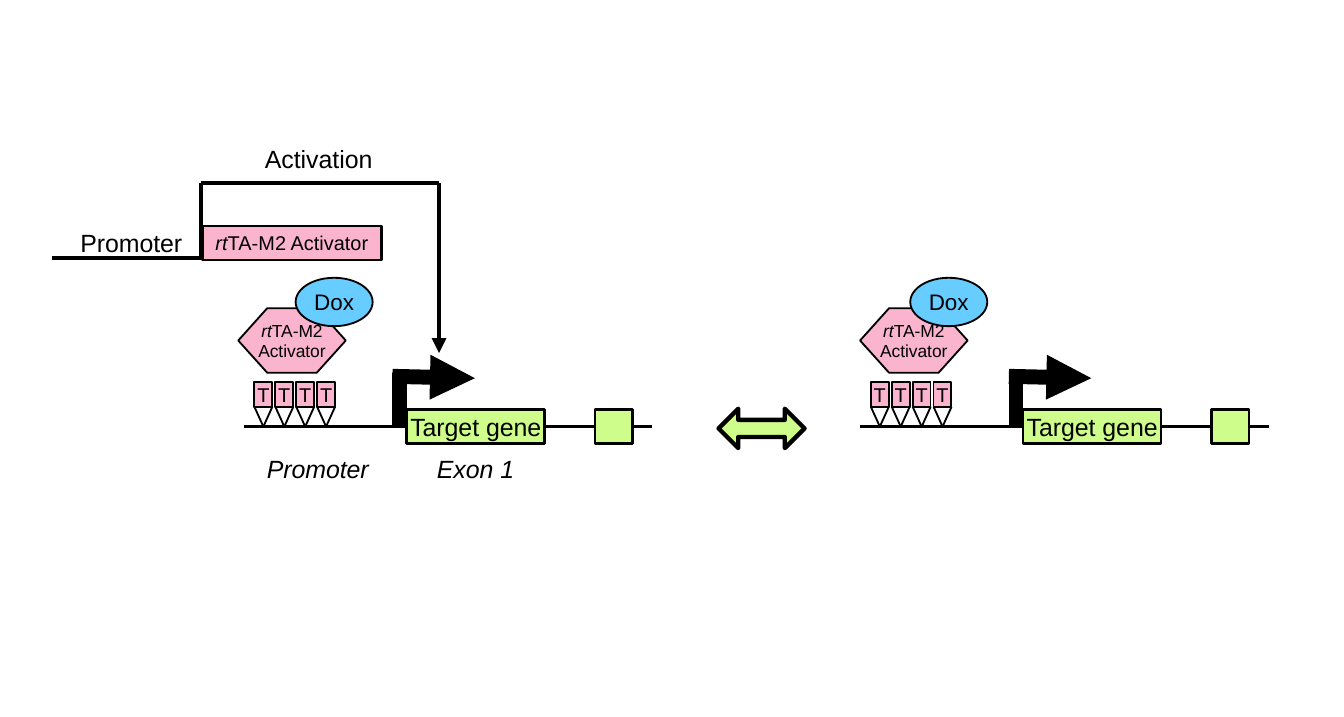
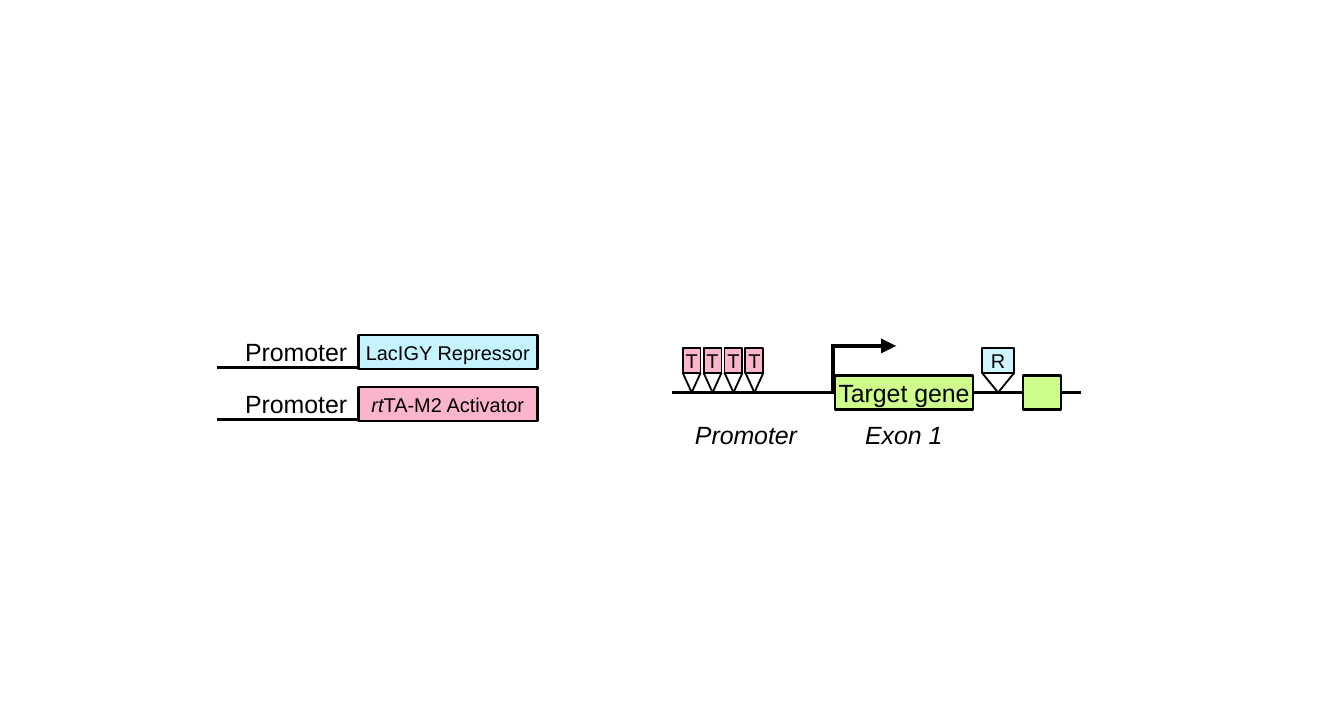
from dataclasses import dataclass

from lxml.etree import SubElement
from pptx import Presentation
from pptx.dml.color import RGBColor
from pptx.enum.shapes import MSO_CONNECTOR, MSO_SHAPE
from pptx.enum.text import MSO_ANCHOR, PP_ALIGN
from pptx.oxml.ns import qn
from pptx.util import Inches, Pt


@dataclass(frozen=True)
class Theme:
    font: str = "Arial"
    ink: str = "000000"
    pink: str = "FAB4CE"
    green: str = "CEFD8B"
    blue: str = "67CCFF"
    pale_blue: str = "C5F3FF"
    operator_blue: str = "CFF5FF"
    label: int = 10
    dox: int = 9
    small: int = 8
    tiny: int = 7
    hairline: float = 0.75
    outline: float = 1
    strand: float = 1.5
    heavy: float = 6


T = Theme()
RT = ("rt", True)
ACTIVATOR = [[RT, ("TA-M2 Activator", False)]]
REPRESSOR = [[("LacIGY Repressor", False)]]


# Shared drawing helpers
def write(tf, lines, size):
    """Fill a text frame; each line is a list of (text, italic) runs."""
    for i, runs in enumerate(lines):
        p = tf.paragraphs[0] if i == 0 else tf.add_paragraph()
        p.font.name, p.font.size = T.font, Pt(size)
        p.font.color.rgb = RGBColor.from_string(T.ink)
        for text, italic in runs:
            r = p.add_run()
            r.text = text
            r.font.italic = italic


def add_label(shapes, x, y, w, text, italic=False):
    tf = shapes.add_textbox(Inches(x), Inches(y), Inches(w), Inches(0.27)).text_frame
    tf.word_wrap = False
    write(tf, [[(text, italic)]], T.label)


def add_block(shapes, kind, x, y, w, h, fill, weight, lines=(), size=T.label):
    sp = shapes.add_shape(kind, Inches(x), Inches(y), Inches(w), Inches(h))
    sp.shadow.inherit = False
    sp.fill.solid()
    sp.fill.fore_color.rgb = RGBColor.from_string(fill)
    sp.line.color.rgb = RGBColor.from_string(T.ink)
    sp.line.width = Pt(weight)
    tf = sp.text_frame
    tf.word_wrap = False
    tf.vertical_anchor = MSO_ANCHOR.MIDDLE
    write(tf, lines, size)
    for p in tf.paragraphs:
        p.alignment = PP_ALIGN.CENTER
    return sp


def add_line(shapes, x1, y1, x2, y2, weight=T.strand, arrow=False):
    c = shapes.add_connector(MSO_CONNECTOR.STRAIGHT, Inches(x1), Inches(y1),
                             Inches(x2), Inches(y2))
    c.line.color.rgb = RGBColor.from_string(T.ink)
    c.line.width = Pt(weight)
    sp_pr = c._element.spPr
    if arrow:
        SubElement(sp_pr.find(qn("a:ln")), qn("a:tailEnd"), type="triangle")
    SubElement(sp_pr, qn("a:effectLst"))
    return c


# Binding site: lettered box on a V that touches the strand
def add_operator(shapes, x, y, w, letter, fill):
    add_block(shapes, MSO_SHAPE.RECTANGLE, x, y - 0.25, w, 0.14, fill,
              T.hairline, [[(letter, False)]], T.small)
    for side in (x, x + w):
        add_line(shapes, side, y - 0.11, x + w / 2, y, T.hairline)


# Target gene: x is the strand's left end, y its height
def add_target_gene(s, x, y, repressor_site=False):
    shapes = s.shapes.add_group_shape().shapes
    h = 0.19
    strand = add_line(shapes, x, y, x + 0.91, y)
    intron = add_line(shapes, x + 1.68, y, x + 2.28, y)
    exon1 = add_block(shapes, MSO_SHAPE.RECTANGLE, x + 0.91, y - h / 2, 0.77, h,
                      T.green, T.outline, [[("Target gene", False)]])
    strand.end_connect(exon1, 1)
    intron.begin_connect(exon1, 3)
    add_block(shapes, MSO_SHAPE.RECTANGLE, x + 1.96, y - h / 2, 0.21, h,
              T.green, T.outline)
    for i in range(4):
        add_operator(shapes, x + 0.06 + 0.35 * i / 3, y, 0.1, "T", T.pink)
    if repressor_site:
        add_operator(shapes, x + 1.73, y, 0.18, "R", T.operator_blue)
    # Transcription start
    add_line(shapes, x + 0.9, y - 0.26, x + 1.25, y - 0.26, arrow=True)
    add_line(shapes, x + 0.9, y - 0.27, x + 0.9, y)


def add_gene_labels(s, x, y):
    add_label(s.shapes, x + 0.03, y + 0.1, 0.78, "Promoter", True)
    add_label(s.shapes, x + 0.98, y + 0.1, 0.63, "Exon 1", True)


def add_strong_start(s, x, y):
    add_line(s.shapes, x + 0.83, y - 0.28, x + 1.29, y - 0.27, T.heavy, True)
    add_line(s.shapes, x + 0.87, y - 0.3, x + 0.87, y, T.heavy)


# Activator protein with bound Dox
def add_activator_complex(s, x, y, dox_x):
    hexagon = add_block(s.shapes, MSO_SHAPE.HEXAGON, x, y, 0.6, 0.36, T.pink,
                        T.hairline, [[RT, ("TA-M2", False)], [("Activator", False)]],
                        T.tiny)
    hexagon.adjustments[0] = 0.449
    add_block(s.shapes, MSO_SHAPE.OVAL, dox_x, y - 0.17, 0.43, 0.27, T.blue,
              T.hairline, [[("Dox", False)]], T.dox)


# Regulator cassette: promoter strand leading to a coding box at x, y
def add_cassette(s, x, y, lead, fill, lines):
    add_line(s.shapes, x - lead, y + 0.18, x, y + 0.18)
    add_label(s.shapes, x - lead + 0.06, y - 0.04, 0.77, "Promoter")
    add_block(s.shapes, MSO_SHAPE.RECTANGLE, x, y, 1, 0.19, fill, T.outline,
              lines, T.small)


# Path from the activator box up, across and down to the target gene
def add_activation_path(s, x, y, w):
    add_label(s.shapes, x + 0.26, y - 0.27, 0.81, "Activation")
    add_line(s.shapes, x, y + 0.43, x, y)
    add_line(s.shapes, x, y, x + w, y)
    add_line(s.shapes, x + w, y, x + w, y + 0.95, arrow=True)


def build_activation_slide(s):
    arrow = add_block(s.shapes, MSO_SHAPE.UP_DOWN_ARROW, 4.14, 2.15, 0.22, 0.48,
                      T.green, 1.75)
    arrow.rotation = 270
    arrow.adjustments[0], arrow.adjustments[1] = 0.5, 0.435
    y = 2.38
    for x, complex_x, dox_x in ((4.8, 4.8, 5.08), (1.36, 1.33, 1.65)):
        add_activator_complex(s, complex_x, y - 0.66, dox_x)
        add_target_gene(s, x, y)
        add_strong_start(s, x, y)
    add_gene_labels(s, 1.36, y)
    add_cassette(s, 1.13, 1.26, 0.84, T.pink, ACTIVATOR)
    add_activation_path(s, 1.12, 1.02, 1.33)


def build_construct_slide(s):
    cassettes = ((T.pale_blue, REPRESSOR), (T.pink, ACTIVATOR))
    for i, (fill, lines) in enumerate(cassettes):
        add_cassette(s, 2, 1.87 + 0.29 * i, 0.79, fill, lines)
    add_target_gene(s, 3.75, 2.19, repressor_site=True)
    add_gene_labels(s, 3.75, 2.19)


def main():
    prs = Presentation()
    prs.slide_width, prs.slide_height = Inches(7.5), Inches(4)
    for build in (build_activation_slide, build_construct_slide):
        build(prs.slides.add_slide(prs.slide_layouts[6]))
    prs.save("out.pptx")


if __name__ == "__main__":
    main()
